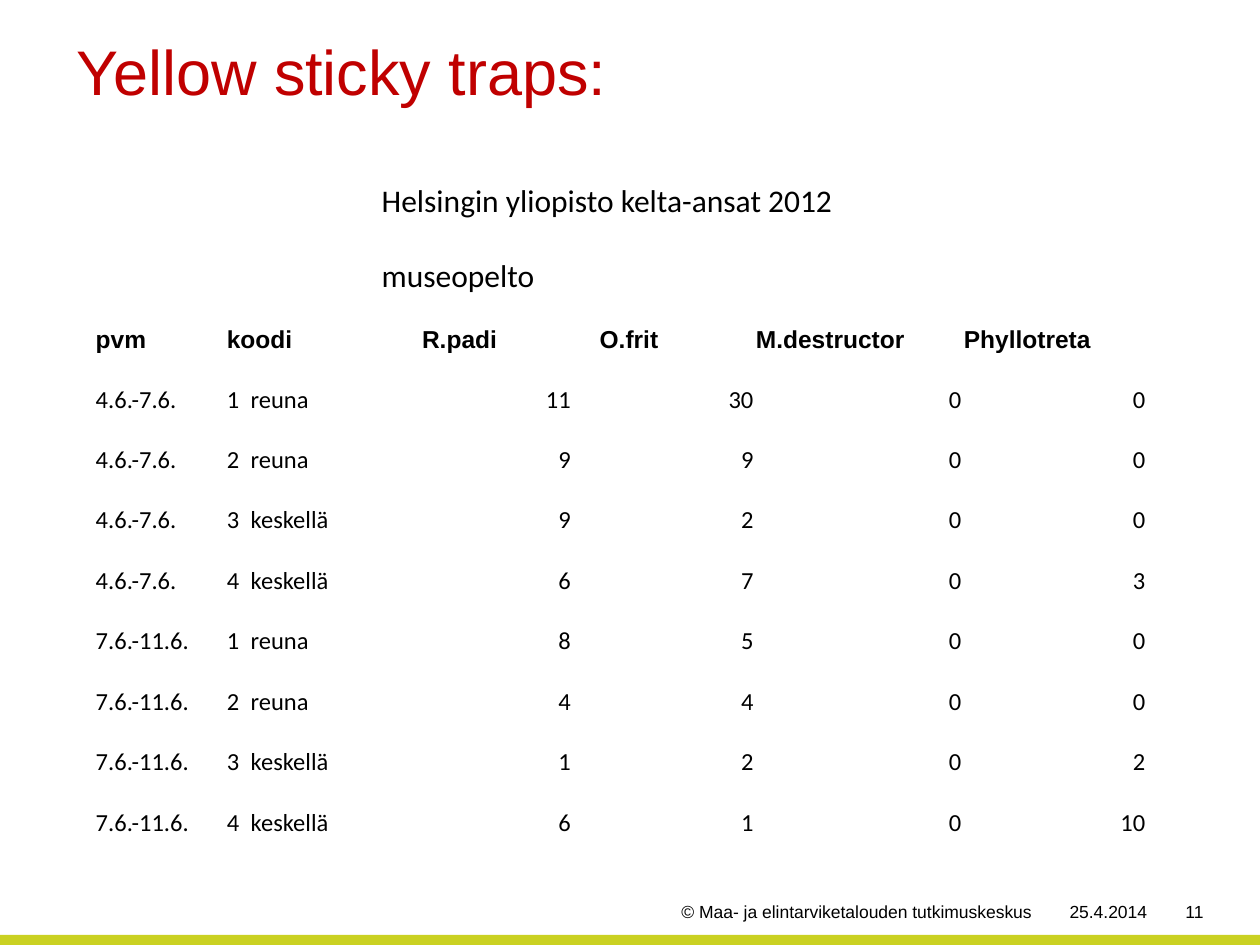
from dataclasses import dataclass

from lxml import etree
from pptx import Presentation
from pptx.dml.color import RGBColor
from pptx.enum.shapes import MSO_SHAPE
from pptx.enum.text import MSO_ANCHOR, MSO_AUTO_SIZE, PP_ALIGN
from pptx.oxml.ns import qn
from pptx.util import Inches, Pt

RECT = MSO_SHAPE.RECTANGLE
TOP, BOTTOM = MSO_ANCHOR.TOP, MSO_ANCHOR.BOTTOM
LEFT, RIGHT = PP_ALIGN.LEFT, PP_ALIGN.RIGHT
FIXED = MSO_AUTO_SIZE.NONE


@dataclass(frozen=True)
class Theme:
    red: RGBColor = RGBColor(0xC0, 0x00, 0x00)
    black: RGBColor = RGBColor(0x00, 0x00, 0x00)
    lime: RGBColor = RGBColor(0xCA, 0xD1, 0x22)
    head: str = "Arial"
    body: str = "Calibri"
    title: int = 36
    sub: int = 18
    cell: int = 14
    foot: int = 10


theme = Theme()


def write(frame, text, size, font=theme.head, color=theme.black, bold=False, align=LEFT, tab=None):
    para = frame.paragraphs[0]
    para.alignment = align
    if tab:
        stops = etree.SubElement(para._p.get_or_add_pPr(), qn("a:tabLst"))
        etree.SubElement(stops, qn("a:tab"), pos=str(tab), algn="l")
    run = para.add_run()
    run.text = text
    run.font.name = font
    run.font.size = Pt(size)
    run.font.bold = bold
    run.font.color.rgb = color


deck = Presentation()
deck.slide_width = Inches(10)
deck.slide_height = Inches(7.5)
slide = deck.slides.add_slide(deck.slide_layouts[5])
shapes = slide.shapes

bar = shapes.add_shape(RECT, Inches(0), Inches(7.42), Inches(10), Inches(0.08))
bar.shadow.inherit = False
bar.fill.solid()
bar.fill.fore_color.rgb = theme.lime
bar.line.fill.background()

for text, left, width in [
    ("25.4.2014", 8.39, 0.84),
    ("© Maa- ja elintarviketalouden tutkimuskeskus", 5.31, 2.98),
    ("11", 9.31, 0.67),
]:
    box = shapes.add_textbox(Inches(left), Inches(7.1), Inches(width), Inches(0.27))
    box.text_frame.word_wrap = True
    write(box.text_frame, text, theme.foot)

widths = [1.04, 1.23, 1.52, 1.45, 1.65, 1.46]
heights = [0.6, 0.6, 0.46] + [0.48] * 8 + [0.39]
heads = ["pvm", "koodi", "R.padi", "O.frit", "M.destructor", "Phyllotreta"]
indents = {2: 0.33, 3: 0.22}
dates = ["4.6.-7.6.", "7.6.-11.6."]
plots = ["1\treuna", "2\treuna", "3\tkeskellä", "4\tkeskellä"]
counts = [
    (11, 30, 0, 0),
    (9, 9, 0, 0),
    (9, 2, 0, 0),
    (6, 7, 0, 3),
    (8, 5, 0, 0),
    (4, 4, 0, 0),
    (1, 2, 0, 2),
    (6, 1, 0, 10),
]

holder = shapes.add_table(
    len(heights), len(widths), Inches(0.75), Inches(1.15), Inches(sum(widths)), Inches(sum(heights))
)
table = holder.table
table.first_row = False
table.horz_banding = False
for col, width in zip(table.columns, widths):
    col.width = Inches(width)
for row, height in zip(table.rows, heights):
    row.height = Inches(height)
for cell in table.iter_cells():
    cell.fill.background()
    cell.vertical_anchor = BOTTOM
    cell.margin_left = cell.margin_right = cell.margin_top = Inches(0.01)
    cell.margin_bottom = Inches(0)

for row, last, text in [(0, 5, "Helsingin yliopisto kelta-ansat 2012"), (1, 3, "museopelto")]:
    cell = table.cell(row, 2)
    cell.merge(table.cell(row, last))
    write(cell.text_frame, text, theme.sub, font=theme.body)

for col, text in enumerate(heads):
    cell = table.cell(2, col)
    cell.margin_left = Inches(indents.get(col, 0.01))
    write(cell.text_frame, text, theme.cell, bold=True)

for num, values in enumerate(counts):
    row = num + 3
    part, plot = divmod(num, len(plots))
    write(table.cell(row, 0).text_frame, dates[part], theme.cell, font=theme.body)
    write(table.cell(row, 1).text_frame, plots[plot], theme.cell, font=theme.body, tab=Inches(0.19))
    for col, value in enumerate(values, 2):
        write(table.cell(row, col).text_frame, str(value), theme.cell, font=theme.body, align=RIGHT)

title = shapes.title
title.left, title.top = Inches(0.51), Inches(0.21)
title.width, title.height = Inches(5.04), Inches(0.71)
title.text_frame.auto_size = FIXED
title.text_frame.vertical_anchor = TOP
write(title.text_frame, "Yellow sticky traps:", theme.title, color=theme.red)

deck.save("out.pptx")
